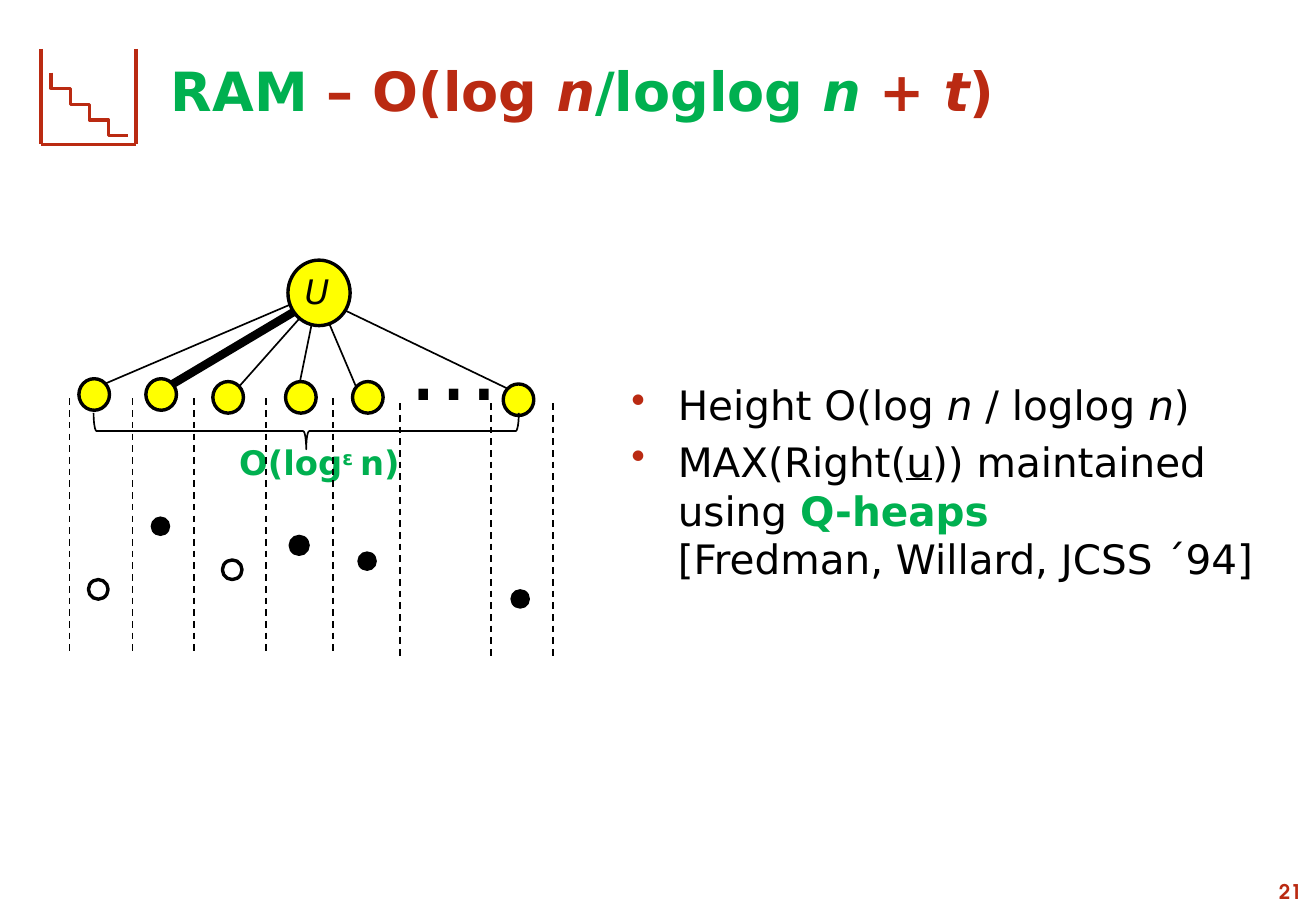
from lxml.etree import SubElement
from pptx import Presentation
from pptx.dml.color import RGBColor
from pptx.enum.dml import MSO_LINE
from pptx.enum.shapes import MSO_CONNECTOR, MSO_SHAPE as Preset
from pptx.enum.text import MSO_ANCHOR as Anchor, PP_ALIGN as Align
from pptx.oxml.ns import qn
from pptx.util import Cm, Pt

COLORS = {"red": "BA2A12", "green": "00B050", "black": "000000", "yellow": "FFFF00"}
FONT, NUMBER_FONT = "DejaVu Sans", "TeX Gyre Adventor"

# Text: runs are (text, colour, style letters b/i/u/^)
TITLE = [("RAM", "green", "b"), (" – O(log ", "red", "b"), ("n", "red", "bi"),
         ("/loglog ", "green", "b"), ("n ", "green", "bi"), ("+", "red", "b"),
         (" t", "red", "bi"), (")", "red", "b")]
BULLETS = [
    (1.5, [("Height O(log ", "black", ""), ("n ", "black", "i"), ("/ loglog ", "black", ""),
           ("n", "black", "i"), (")", "black", "")]),
    (1.0, [("MAX(Right(", "black", ""), ("u", "black", "u"),
           (")) maintained using ", "black", ""), ("Q-heaps\n", "green", "b"),
           ("[Fredman, Willard, JCSS ´94]", "black", "")]),
]
# Tree labels: box, size, runs
DEGREE = ((4.75, 9.12, 4.06, 1.12), 20,
          [("O(log", "green", "b"), ("ε ", "green", "b^"), ("n)", "green", "b")])
MORE = ((8.28, 6.35, 2.08, 2.57), 54, [("…", "black", "")])
ROOT_NAME = ((6.12, 5.54, 1.22, 1.12), 20, [("U", "black", "i")])

# Tree: child left, child top, edge start, edge end, edge width
ROOT = (6.02, 5.44, 1.3, 1.37)
CHILD_SIZE = (0.64, 0.66)
CHILDREN = [
    (1.65, 7.92, (6.65, 6.12), (2.18, 8.03), 1),
    (3.05, 7.92, (6.65, 6.22), (3.61, 8.03), 5),
    (4.45, 7.98, (6.65, 6.22), (5.0, 8.08), 1),
    (5.97, 7.98, (6.65, 6.12), (6.27, 7.98), 1),
    (7.37, 7.98, (6.65, 6.22), (7.44, 8.08), 1),
    (10.52, 8.03, (6.65, 6.22), (10.62, 8.13), 1),
]
BRACE = (6.02, 4.57, 0.76, 8.89)

# Slabs: top of the separators and their x positions
SEPARATORS = {8.33: [1.45, 2.77, 4.06, 5.56, 6.96], 8.43: [8.36, 10.26, 11.56]}
SEPARATOR_LENGTH = 5.28
# Points: left, top, fill, line width
POINT_SIZE = 0.41
POINTS = [(3.15, 10.8, "black", 0), (6.05, 11.2, "black", 1), (10.67, 12.32, "black", 0),
          (7.47, 11.53, "black", 0), (1.85, 12.12, None, 2), (4.65, 11.71, None, 2)]

# Staircase icon
ICON_LEFT, ICON_TOP, ICON_RIGHT, ICON_BOTTOM = 0.86, 1.02, 2.84, 3.02
STAIR_LEFT, STAIR_TOP, STAIR_WIDTH, STAIR_HEIGHT, STAIR_COUNT = 1.07, 1.52, 0.4, 0.33, 4

deck = Presentation()
deck.slide_width, deck.slide_height = Cm(27.51), Cm(19.05)
page = deck.slides.add_slide(deck.slide_layouts[6])


def rgb(name):
    return RGBColor.from_string(COLORS[name])


def add_line(start, end, width=1, color="black", dashed=False):
    line = page.shapes.add_connector(MSO_CONNECTOR.STRAIGHT, *map(Cm, start + end))
    line.line.color.rgb = rgb(color)
    line.line.width = Pt(width)
    if dashed:
        line.line.dash_style = MSO_LINE.DASH
    SubElement(line._element.spPr, qn("a:effectLst"))


def paint(shape, fill=None, width=1, color="black"):
    shape.shadow.inherit = False
    if fill:
        shape.fill.solid()
        shape.fill.fore_color.rgb = rgb(fill)
    else:
        shape.fill.background()
    if width:
        shape.line.color.rgb = rgb(color)
        shape.line.width = Pt(width)
    else:
        shape.line.fill.background()


def add_node(place, fill, width):
    paint(page.shapes.add_shape(Preset.FLOWCHART_CONNECTOR, *map(Cm, place)), fill, width)


def add_box(place, wrap=True, anchor=Anchor.TOP):
    frame = page.shapes.add_textbox(*map(Cm, place)).text_frame
    frame.word_wrap = wrap
    frame.vertical_anchor = anchor
    return frame


def add_runs(para, runs, size, font=FONT):
    for text, color, style in runs:
        span = para.add_run()
        span.text = text.rstrip("\n")
        span.font.name, span.font.size = font, Pt(size)
        span.font.color.rgb = rgb(color)
        span.font.bold, span.font.italic = "b" in style, "i" in style
        span.font.underline = "u" in style
        if "^" in style:
            span.font._element.set("baseline", "30000")
        if text.endswith("\n"):
            para.add_line_break()


def add_label(place, size, runs):
    para = add_box(place, wrap=False).paragraphs[0]
    para.space_before = Pt(size * 0.2)
    add_runs(para, runs, size)


def add_bullet(para, indent=0.97):
    props = para._p.get_or_add_pPr()
    props.set("marL", str(Cm(indent)))
    props.set("indent", str(-Cm(indent)))
    SubElement(SubElement(props, qn("a:buClr")), qn("a:srgbClr"), val=COLORS["red"])
    SubElement(props, qn("a:buChar"), char="•")


# Page number and title
number = add_box((24.97, 18.26, 2.49, 0.76)).paragraphs[0]
number.alignment = Align.RIGHT
add_runs(number, [("21", "red", "b")], 12, NUMBER_FONT)
title = add_box((1.35, 0.91, 24.77, 1.96), anchor=Anchor.MIDDLE)
title.margin_left = Cm(2.22)
add_runs(title.paragraphs[0], TITLE, 32)

# Tree: edges below the nodes
for _, _, start, end, width in CHILDREN:
    add_line(start, end, width)
for left, top, *_ in CHILDREN:
    add_node((left, top, *CHILD_SIZE), "yellow", 2)
add_label(*MORE)
brace = page.shapes.add_shape(Preset.RIGHT_BRACE, *map(Cm, BRACE))
brace.rotation = 90
paint(brace)
add_label(*DEGREE)
add_node(ROOT, "yellow", 2)
add_label(*ROOT_NAME)

# Slabs with their points
for top, columns in SEPARATORS.items():
    for x in columns:
        add_line((x, top), (x, top + SEPARATOR_LENGTH), dashed=True)
for left, top, fill, width in POINTS:
    add_node((left, top, POINT_SIZE, POINT_SIZE), fill, width)

# Staircase icon
for x in (ICON_LEFT, ICON_RIGHT):
    add_line((x, ICON_TOP), (x, ICON_BOTTOM), 2, "red")
add_line((ICON_LEFT, ICON_BOTTOM), (ICON_RIGHT, ICON_BOTTOM), 2, "red")
stairs = page.shapes.build_freeform(Cm(STAIR_LEFT), Cm(STAIR_TOP))
for step in range(STAIR_COUNT):
    x, y = STAIR_LEFT + step * STAIR_WIDTH, STAIR_TOP + (step + 1) * STAIR_HEIGHT
    stairs.add_line_segments([(Cm(x), Cm(y)), (Cm(x + STAIR_WIDTH), Cm(y))], close=False)
paint(stairs.convert_to_shape(), None, 2, "red")

# Bullet list
body = add_box((12.95, 7.32, 14.25, 7.29))
for index, (spacing, runs) in enumerate(BULLETS):
    para = body.add_paragraph() if index else body.paragraphs[0]
    para.line_spacing, para.space_before = spacing, Pt(4.8)
    add_bullet(para)
    add_runs(para, runs, 24)

deck.save("out.pptx")
